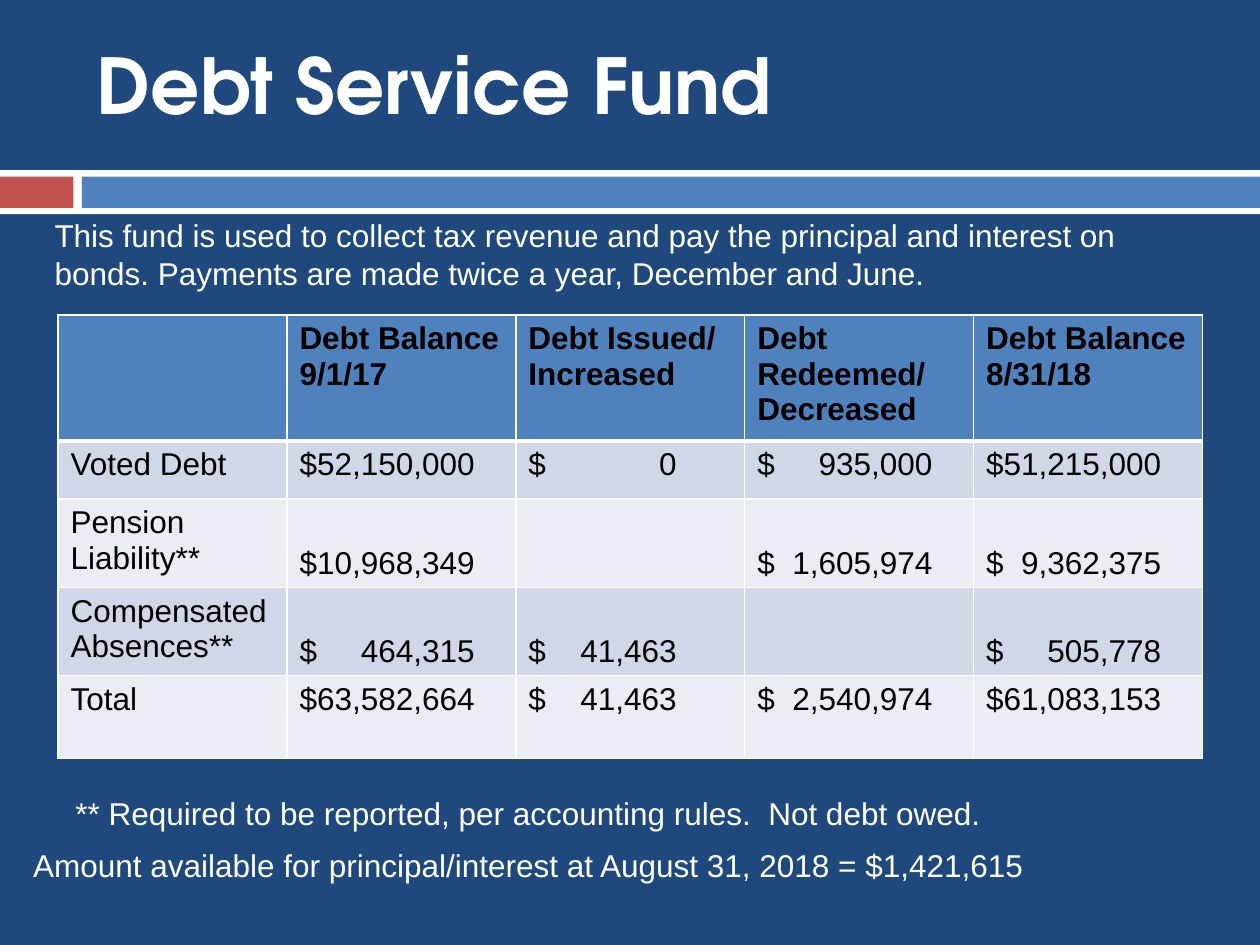
import pptx
import pptx.util
import pptx.dml.color
import pptx.enum.shapes
import pptx.enum.text
import pptx.oxml
import pptx.oxml.ns
from dataclasses import dataclass
from lxml import etree

Cm, Pt = pptx.util.Cm, pptx.util.Pt
Anchor = pptx.enum.text.MSO_ANCHOR
Fit = pptx.enum.text.MSO_AUTO_SIZE

# Content
TITLE = "Debt Service Fund"
NOTES = [  # text, left, top, width, height in cm
    ("This fund is used to collect tax revenue and pay the principal and "
     "interest on bonds. Payments are made twice a year, December and June.",
     0.85, 4.23, 23.71, 1.8),
    ("Amount available for principal/interest at August 31, 2018 = $1,421,615",
     0.42, 16.93, 23.71, 1.03),
    ("** Required to be reported, per accounting rules.  Not debt owed.",
     1.27, 15.88, 22.86, 1.03),
]
HEAD = ["", "Debt Balance 9/1/17", "Debt Issued/\nIncreased",
        "Debt Redeemed/\nDecreased", "Debt Balance 8/31/18"]
ROWS = [
    ["Voted Debt", "52,150,000", "0", "935,000", "51,215,000"],
    ["Pension Liability**", "10,968,349", "", "1,605,974", "9,362,375"],
    ["Compensated Absences**", "464,315", "41,463", "", "505,778"],
    ["Total", "63,582,664", "41,463", "2,540,974", "61,083,153"],
]
HIGHS = [2.54, 1.17, 1.78, 1.78, 1.67]  # row heights in cm
TABS = [0, 3.53, 2.99, 3.53, 3.53]      # right edge of the amounts in cm
LOW = {2, 3}                            # rows with amounts at the bottom


@dataclass(frozen=True)
class Theme:
    back: str = "1F497D"
    white: str = "FFFFFF"
    black: str = "000000"
    red: str = "C0504D"
    blue: str = "4F81BD"
    bands: tuple = ("E9EDF4", "D0D8E8")
    head: str = "TeX Gyre Adventor"
    body: str = "Arial"
    big: int = 44
    text: int = 18


THEME = Theme()
BARS = [  # left, top, width, height in cm, colour
    (0, 3.43, 25.4, 0.89, THEME.white),
    (0, 3.56, 1.48, 0.63, THEME.red),
    (1.65, 3.56, 23.75, 0.63, THEME.blue),
]


def rgb(code):
    return pptx.dml.color.RGBColor.from_string(code)


def paint(item, code):
    item.fill.solid()
    item.fill.fore_color.rgb = rgb(code)


def write(frame, text, font=THEME.body, size=THEME.text,
          color=THEME.white, bold=False, tab=0):
    for num, line in enumerate(text.split("\n")):
        para = frame.add_paragraph() if num else frame.paragraphs[0]
        para.alignment = pptx.enum.text.PP_ALIGN.LEFT
        run = para.add_run()
        run.text = line
        run.font.name, run.font.size = font, Pt(size)
        run.font.bold, run.font.color.rgb = bold, rgb(color)
        if tab:
            stops = etree.SubElement(para._p.get_or_add_pPr(),
                                     pptx.oxml.ns.qn("a:tabLst"))
            etree.SubElement(stops, pptx.oxml.ns.qn("a:tab"),
                             pos=str(Cm(tab)), algn="r")


def edge(cell, widths):
    """Draw white borders; widths maps a side (L, R, T, B) to points."""
    props = cell._tc.get_or_add_tcPr()
    for spot, (side, width) in enumerate(widths.items()):
        line = pptx.oxml.parse_xml(
            f'<a:ln{side} {pptx.oxml.ns.nsdecls("a")} w="{Pt(width)}">'
            f'<a:solidFill><a:srgbClr val="{THEME.white}"/></a:solidFill>'
            f'</a:ln{side}>')
        props.insert(spot, line)


def add_bars(slide):
    for *box, color in BARS:
        bar = slide.shapes.add_shape(
            pptx.enum.shapes.MSO_SHAPE.RECTANGLE, *map(Cm, box))
        bar.shadow.inherit = False
        paint(bar, color)
        bar.line.fill.background()


def add_title(slide):
    title = slide.shapes.title
    title.left, title.top = Cm(1.7), Cm(0)
    title.width, title.height = Cm(22.02), Cm(3.38)
    title.text_frame.vertical_anchor = Anchor.MIDDLE
    title.text_frame.auto_size = Fit.NONE
    write(title.text_frame, TITLE, font=THEME.head, size=THEME.big, bold=True)


def add_note(slide, text, *box):
    frame = slide.shapes.add_textbox(*map(Cm, box)).text_frame
    frame.word_wrap = True
    frame.auto_size = Fit.SHAPE_TO_FIT_TEXT
    write(frame, text)


def add_grid(slide):
    data = [HEAD] + ROWS
    grid = slide.shapes.add_table(
        len(data), len(HEAD), Cm(1.17), Cm(6.35),
        Cm(23.07), Cm(sum(HIGHS))).table
    for col in grid.columns:
        col.width = Cm(23.07 / len(HEAD))
    for r, (row, high) in enumerate(zip(data, HIGHS)):
        grid.rows[r].height = Cm(high)
        for c, text in enumerate(row):
            cell = grid.cell(r, c)
            paint(cell, THEME.bands[r % 2] if r else THEME.blue)
            edge(cell, {"L": 1, "R": 1, "T": 3 if r == 1 else 1,
                        "B": 1 if r else 3})
            money = r > 0 and c > 0
            if money and r in LOW:
                cell.vertical_anchor = Anchor.BOTTOM
            if text:
                write(cell.text_frame, f"$\t{text}" if money else text,
                      color=THEME.black, bold=r == 0,
                      tab=TABS[c] if money else 0)


def main():
    deck = pptx.Presentation()
    deck.slide_width, deck.slide_height = Cm(25.4), Cm(19.05)
    slide = deck.slides.add_slide(deck.slide_layouts[5])
    paint(slide.background, THEME.back)
    add_bars(slide)
    add_title(slide)
    add_grid(slide)
    for note in NOTES:
        add_note(slide, *note)
    deck.save("out.pptx")


if __name__ == "__main__":
    main()
